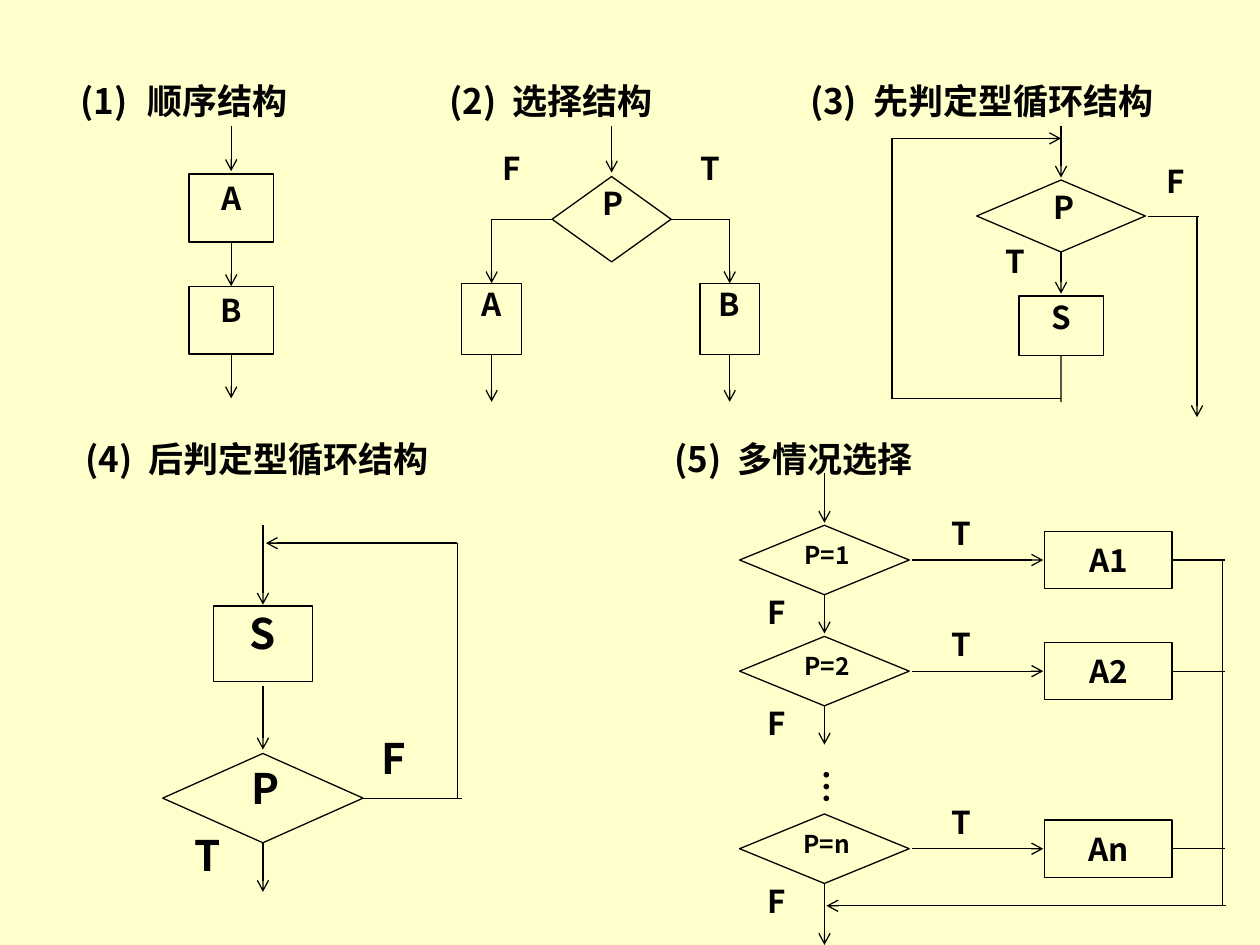
import dataclasses
import typing

import pptx
import pptx.dml.color
import pptx.enum.shapes
import pptx.enum.text
import pptx.oxml.ns
import pptx.util

Cm = pptx.util.Cm
SHAPES = pptx.enum.shapes.MSO_SHAPE
ALIGN = pptx.enum.text.PP_ALIGN
FONT = "Noto Sans CJK SC"
INK, LINE, PAPER = "020202", "000000", "FFFFCC"
TOP, LEFT, BOTTOM, RIGHT = range(4)


def color(value):
    return pptx.dml.color.RGBColor.from_string(value)


def add_xml(parent, tag, **attributes):
    element = parent.makeelement(pptx.oxml.ns.qn(tag), attributes)
    parent.append(element)


def format_run(run, size, font=FONT):
    run.font.size = pptx.util.Pt(size)
    run.font.bold = True
    run.font.color.rgb = color(INK)
    run.font.name = font
    add_xml(run._r.get_or_add_rPr(), "a:ea", typeface=font)


@dataclasses.dataclass
class Region:
    """A part of the page; all lengths are centimetres from its corner."""
    page: typing.Any
    left: float
    top: float
    size: float = 18
    inset: float = 0.03

    def place(self, x, y):
        return Cm(self.left + x), Cm(self.top + y)

    def title(self, number, name, width, height, numbered=False):
        box = self.page.shapes.add_textbox(*self.place(0, 0), Cm(width), Cm(height))
        box.text_frame.word_wrap = True
        para = box.text_frame.paragraphs[0]
        if numbered:
            properties = para._p.get_or_add_pPr()
            properties.set("marL", str(Cm(1.35)))
            properties.set("indent", str(-Cm(1.35)))
            add_xml(properties, "a:buFont", typeface=FONT)
            add_xml(properties, "a:buAutoNum", type="arabicParenBoth")
            pieces = [name]
        else:
            pieces = [f"({number})", " ", name]
        for piece in pieces:
            run = para.add_run()
            run.text = piece
            format_run(run, 20)
            if piece == " ":  # widen the gap after the number
                run._r.get_or_add_rPr().set("spc", "460")

    def fill_text(self, box, text, size=None, font=FONT, align=ALIGN.CENTER):
        frame = box.text_frame
        frame.text = text
        frame.word_wrap = True
        frame.vertical_anchor = pptx.enum.text.MSO_ANCHOR.TOP
        frame.margin_left = frame.margin_right = Cm(0.05)
        frame.margin_top, frame.margin_bottom = Cm(self.inset), Cm(0.03)
        frame.paragraphs[0].alignment = align
        format_run(frame.paragraphs[0].runs[0], size or self.size, font)

    def label(self, text, x, y, width, height, **style):
        box = self.page.shapes.add_textbox(*self.place(x, y), Cm(width), Cm(height))
        self.fill_text(box, text, **style)
        return box

    def node(self, kind, x, y, width, height, text=""):
        shape = self.page.shapes.add_shape(kind, *self.place(x, y), Cm(width), Cm(height))
        shape.shadow.inherit = False
        shape.fill.background()
        shape.line.color.rgb = color(LINE)
        shape.line.width = pptx.util.Pt(0.75)
        if text:
            self.fill_text(shape, text)
        return shape

    def line(self, x1, y1, x2, y2, arrow=True, begin=None, end=None):
        link = self.page.shapes.add_connector(
            pptx.enum.shapes.MSO_CONNECTOR.STRAIGHT, *self.place(x1, y1), *self.place(x2, y2))
        link.line.color.rgb = color(LINE)
        link.line.width = pptx.util.Pt(0.75)
        if arrow:
            add_xml(link.line._get_or_add_ln(), "a:tailEnd", type="arrow")
        add_xml(link._element.spPr, "a:effectLst")
        if begin:
            link.begin_connect(*begin)
        if end:
            link.end_connect(*end)


def draw_sequence(page, left, top):
    region = Region(page, left, top, inset=0.1)
    region.title(1, "顺序结构", 7.75, 1.9, numbered=True)
    axis = 3.29
    first, second = [region.node(SHAPES.RECTANGLE, axis - 0.85, y, 1.7, 1.37, text)
                     for text, y in (("A", 2.04), ("B", 4.3))]
    region.line(axis, 1.07, axis, 1.98)
    region.line(axis, 3.41, axis, 4.3, begin=(first, BOTTOM), end=(second, TOP))
    region.line(axis, 5.67, axis, 6.56, begin=(second, BOTTOM))


def draw_selection(page, left, top):
    region = Region(page, left, top)
    region.title(2, "选择结构", 8.56, 1.9)
    axis, middle = 3.52, 2.95
    test = region.node(SHAPES.DIAMOND, axis - 1.2, middle - 0.86, 2.4, 1.72)
    region.label("P", 2.95, 2.21, 1.19, 1.45)
    region.line(axis, 1.07, axis, 2.01)
    # The two branches: box, its axis, answer, place of the answer, side of the test
    for text, x, answer, answer_x, side, edge in (
            ("A", 1.1, "F", 0.92, LEFT, axis - 1.2), ("B", 5.9, "T", 4.91, RIGHT, axis + 1.2)):
        box = region.node(SHAPES.RECTANGLE, x - 0.6, 4.24, 1.2, 1.44, text)
        region.label(answer, answer_x, 1.5, 1.19, 1.45)
        region.line(edge, middle, x, middle, arrow=False, begin=(test, side))
        region.line(x, middle, x, 4.24, end=(box, TOP))
        region.line(x, 5.68, x, 6.63, begin=(box, BOTTOM))


def draw_pretest_loop(page, left, top):
    region = Region(page, left, top)
    region.title(3, "先判定型循环结构", 9.32, 1.9)
    axis, back, leave = 5.31, 1.9, 8.05
    test = region.node(SHAPES.DIAMOND, axis - 1.7, 2.16, 3.4, 1.45)
    body = region.node(SHAPES.RECTANGLE, axis - 0.85, 4.5, 1.7, 1.2, "S")
    for text, x, y in (("P", 4.52, 2.29), ("T", 3.53, 3.38), ("F", 6.78, 1.76)):
        region.label(text, x, y, 1.7, 1.22)
    region.line(axis, 1.07, axis, 2.11)
    region.line(axis, 3.61, axis, 4.45, begin=(test, BOTTOM))
    # Way back to the test
    region.line(axis, 5.7, axis, 6.63, arrow=False, begin=(body, BOTTOM))
    region.line(axis, 6.56, back, 6.56, arrow=False)
    region.line(back, 6.58, back, 1.32, arrow=False)
    region.line(back, 1.32, axis, 1.32)
    # Way out
    region.line(7.06, 2.9, 8.1, 2.9, arrow=False)
    region.line(leave, 2.9, leave, 6.94)


def draw_posttest_loop(page, left, top):
    region = Region(page, left, top, size=24)
    region.title(4, "后判定型循环结构", 9.32, 1.09)
    axis, back = 3.83, 7.75
    region.node(SHAPES.RECTANGLE, axis - 1, 3.53, 2, 1.52, "S")
    test = region.node(SHAPES.DIAMOND, axis - 2.02, 6.5, 4.04, 1.8)
    for text, x, y in (("P", 2.87, 6.65), ("T", 1.71, 8), ("F", 5.46, 6.04)):
        region.label(text, x, y, 2.01, 1.5)
    region.line(axis, 1.9, axis, 3.5)
    region.line(axis, 5.13, axis, 6.42)
    region.line(axis, 8.3, axis, 9.29, begin=(test, BOTTOM))
    # Way back to the body
    region.line(axis + 2.02, 7.4, 7.85, 7.4, arrow=False, begin=(test, RIGHT))
    region.line(back, 7.4, back, 2.26, arrow=False)
    region.line(back, 2.26, 3.89, 2.26)


def draw_cases(page, left, top):
    region = Region(page, left, top, inset=0.2)
    region.title(5, "多情况选择", 7.82, 1.09)
    axis, rail, finish = 3.28, 11.3, 9.57
    region.line(axis, 0.84, axis, 1.85)
    # One row for each case
    for case, row, drop in (("1", 1.9, 2.18), ("2", 4.14, 2.18), ("n", 7.72, 2.64)):
        middle = row + 0.7
        test = region.node(SHAPES.DIAMOND, axis - 1.71, row, 3.42, 1.4)
        action = region.node(SHAPES.RECTANGLE, 7.72, middle - 0.58, 2.57, 1.16, f"A{case}")
        region.label(f"P={case}", 2.48, row + 0.1, 1.7, 1.17, size=14)
        region.label("T", 5.18, row - 0.43, 1.7, 1.17)
        region.label("F", 1.47, row + 1.17, 1.7, 1.17)
        region.line(axis, row + 1.4, axis, row + drop, begin=(test, BOTTOM))
        region.line(5.05, middle, 7.69, middle)
        region.line(10.29, middle, 11.35, middle, arrow=False, begin=(action, RIGHT))
    dots = region.label("…", 2.46, 6.63, 1.57, 1.37, size=20,
                        font="Times New Roman", align=ALIGN.JUSTIFY)
    dots.text_frame._txBody.bodyPr.set("vert", "eaVert")
    # Common way out
    region.line(rail, 2.6, rail, finish, arrow=False)
    region.line(11.37, finish, 3.32, finish)


def main():
    deck = pptx.Presentation()
    deck.slide_width, deck.slide_height = Cm(25.4), Cm(19.05)
    page = deck.slides.add_slide(deck.slide_layouts[6])
    page.background.fill.solid()
    page.background.fill.fore_color.rgb = color(PAPER)
    draw_sequence(page, 1.37, 1.47)
    draw_selection(page, 8.81, 1.47)
    draw_pretest_loop(page, 16.08, 1.47)
    draw_posttest_loop(page, 1.47, 8.69)
    draw_cases(page, 13.34, 8.69)
    deck.save("out.pptx")


if __name__ == "__main__":
    main()
